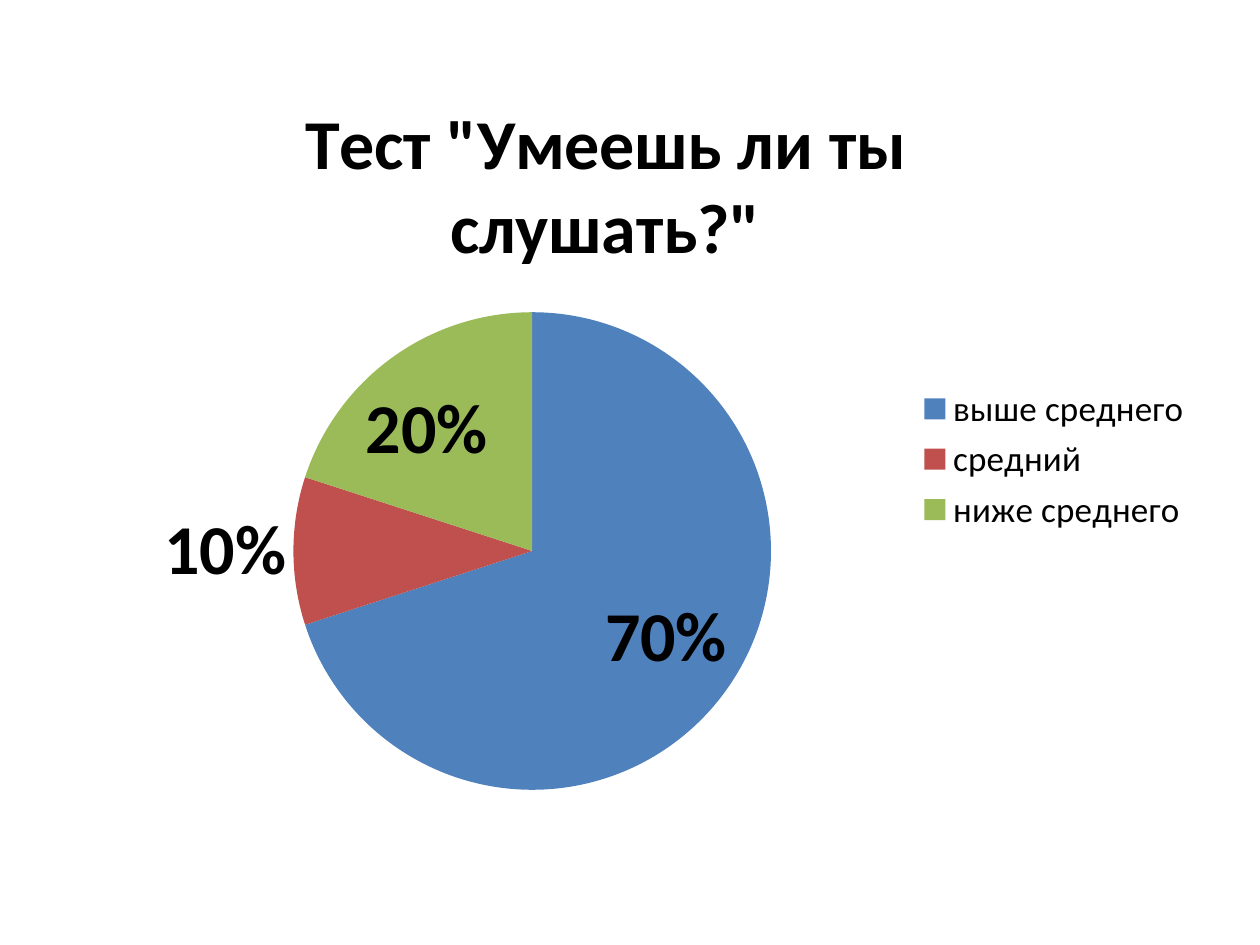
from lxml import etree
from pptx import Presentation
from pptx.chart.data import CategoryChartData
from pptx.dml.color import RGBColor as RGB
from pptx.enum.chart import XL_CHART_TYPE as ChartType
from pptx.enum.chart import XL_LABEL_POSITION as LabelPos
from pptx.enum.chart import XL_LEGEND_POSITION as LegendPos
from pptx.oxml.ns import qn
from pptx.util import Inches, Pt

THEME = {
    "font": "Calibri",
    "text": RGB.from_string("000000"),
    "slices": ["4F81BD", "C0504D", "9BBB59"],
    "base": Pt(10),
    "legend": Pt(20),
    "large": Pt(40),
}
HEADING = 'Тест "Умеешь ли ты слушать?"'
RESULTS = {"выше среднего": 70, "средний ": 10, "ниже среднего": 20}


def style(font, size, bold):
    formats = {"name": THEME["font"], "size": size, "bold": bold}
    for attribute, value in formats.items():
        setattr(font, attribute, value)
    font.color.rgb = THEME["text"]


def place(element, index, **shares):
    """Fix a chart part at the given shares of the chart's size."""
    for old in element.findall(qn("c:layout")):
        element.remove(old)
    layout = etree.Element(qn("c:layout"))
    manual = etree.SubElement(layout, qn("c:manualLayout"))
    if "w" in shares:
        etree.SubElement(manual, qn("c:layoutTarget")).set("val", "inner")
    for axis in "xy":
        etree.SubElement(manual, qn(f"c:{axis}Mode")).set("val", "edge")
    for key, share in shares.items():
        etree.SubElement(manual, qn(f"c:{key}")).set("val", str(share))
    element.insert(index, layout)


# Slide
deck = Presentation()
deck.slide_width, deck.slide_height = Inches(10), Inches(7.5)
slide = deck.slides.add_slide(deck.slide_layouts[6])

# Test results
results = CategoryChartData()
results.categories = list(RESULTS)
results.add_series(HEADING, list(RESULTS.values()))
pie = slide.shapes.add_chart(
    ChartType.PIE, Inches(0.51), 0, Inches(9.06), Inches(7.29), results
).chart
style(pie.font, THEME["base"], False)

# Heading inside the chart
pie.has_title = True
heading = pie.chart_title.text_frame
heading.text = HEADING
style(heading.paragraphs[0].runs[0].font, THEME["large"], True)
pie.chart_title.include_in_layout = False
chart_root = pie.element.find(qn("c:chart"))
place(chart_root.find(qn("c:title")), 1, x=0.2, y=0.09)
place(chart_root.find(qn("c:plotArea")), 0, x=0.2, y=0.34, w=0.42, h=0.52)

# Legend
pie.has_legend = True
pie.legend.position = LegendPos.RIGHT
pie.legend.include_in_layout = False
style(pie.legend.font, THEME["legend"], False)

# Slices and their percentages
plot = pie.plots[0]
plot.vary_by_categories = True
answers = plot.series[0]
for number, color in enumerate(THEME["slices"]):
    fill = answers.points[number].format.fill
    fill.solid()
    fill.fore_color.rgb = RGB.from_string(color)
shares = answers.data_labels
label_formats = {
    "show_percentage": True,
    "show_value": False,
    "show_legend_key": False,
    "number_format": "0%",
    "number_format_is_linked": False,
    "position": LabelPos.BEST_FIT,
}
for attribute, value in label_formats.items():
    setattr(shares, attribute, value)
style(shares.font, THEME["large"], True)

deck.save("out.pptx")
